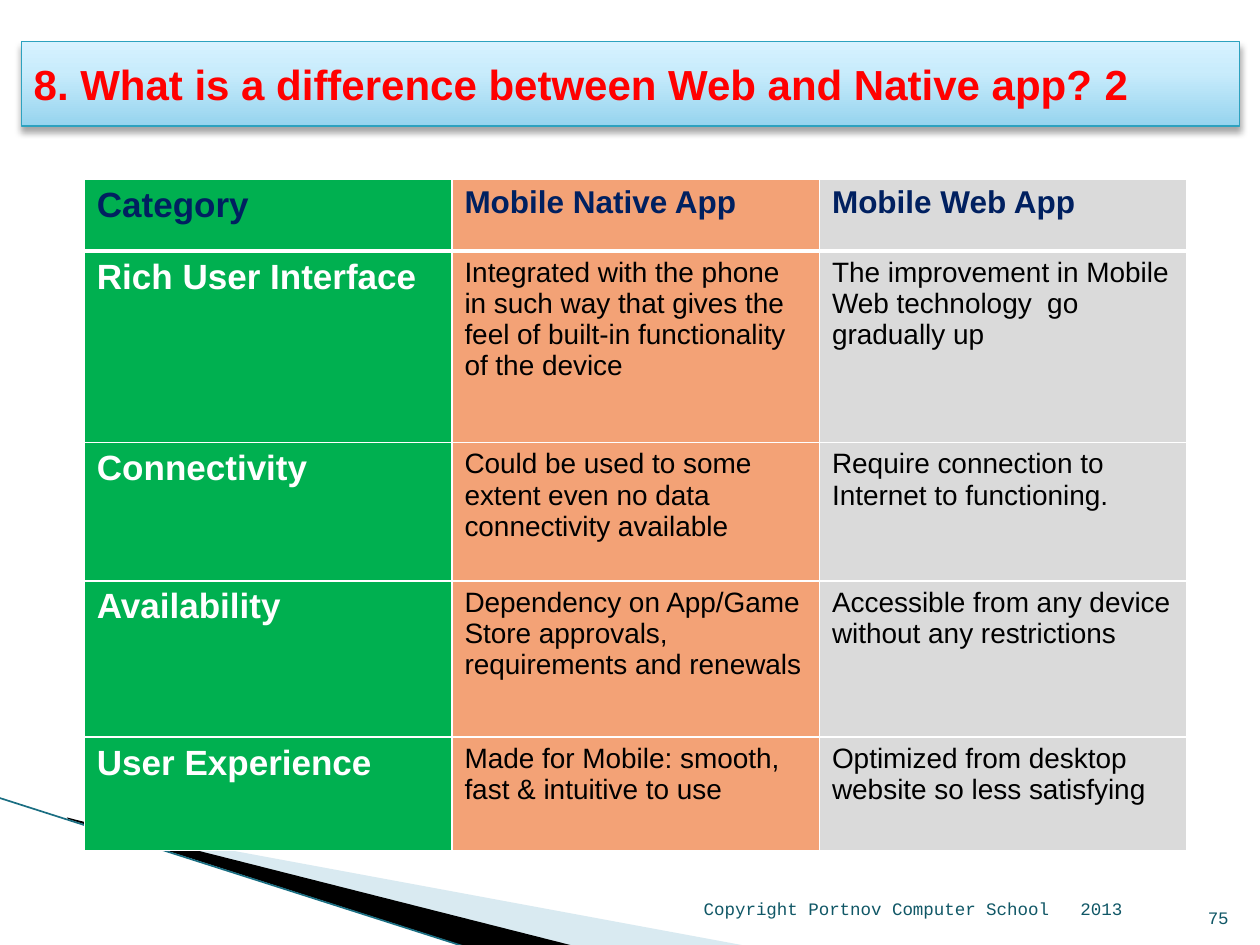
"""Build the slide comparing native and web mobile apps."""
from dataclasses import dataclass

from lxml import etree
from pptx import Presentation
from pptx import util as u
from pptx.dml.color import RGBColor
from pptx.enum import shapes, text
from pptx.oxml import ns

WHITE, BLACK, NAVY, TEAL = "FFFFFF", "000000", "002060", "105766"
COLUMN_FILLS = ("00B050", "F3A276", "DADADA")
COLUMN_WIDTH = 7.41
ROW_HEIGHTS = (1.45, 3.86, 2.79, 3.15, 2.29)
ROWS = (
    ("Category", "Mobile Native App", "Mobile Web App"),
    ("Rich User Interface",
     "Integrated with the phone in such way that gives the feel of built-in functionality of the device",
     "The improvement in Mobile Web technology  go gradually up"),
    ("Connectivity",
     "Could be used to some extent even no data connectivity available",
     "Require connection to Internet to functioning."),
    ("Availability",
     "Dependency on App/Game Store approvals, requirements and renewals",
     "Accessible from any device without any restrictions"),
    ("User Experience",
     "Made for Mobile: smooth, fast & intuitive to use",
     "Optimized from desktop website so less satisfying"),
)


@dataclass(frozen=True)
class Style:
    size: float
    color: str
    bold: bool = False
    font: str = "Arial"


@dataclass(frozen=True)
class Wedge:
    points: tuple
    color: str
    opacity: int = 100


@dataclass(frozen=True)
class Footer:
    wording: str
    left: float
    top: float
    width: float
    height: float


WEDGES = (
    Wedge(((1.4, 16.54), (15.11, 19.08), (11.58, 19.08), (1.4, 16.51)), "A0CBDC", 40),
    Wedge(((1.35, 16.48), (11.61, 19.08), (9.45, 19.1), (1.37, 16.51)), BLACK),
)
FOOTERS = (
    Footer("Copyright Portnov Computer School   2013", 12.07, 17.58, 10.8, 1.07),
    Footer("75", 23.7, 17.81, 1.32, 1.02),
)


def rgb(value: str) -> RGBColor:
    return RGBColor.from_string(value)


def add_node(parent, tag: str, **attributes):
    return etree.SubElement(parent, ns.qn(tag), {key: str(value) for key, value in attributes.items()})


def add_color(parent, value: str, opacity: int = 100) -> None:
    color = add_node(parent, "a:srgbClr", val=value)
    if opacity < 100:
        add_node(color, "a:alpha", val=opacity * 1000)


def write(para, wording: str, style: Style) -> None:
    span = para.add_run()
    span.text = wording
    span.font.name = style.font
    span.font.size = u.Pt(style.size)
    span.font.bold = style.bold
    span.font.color.rgb = rgb(style.color)


def add_wedge(page, wedge: Wedge) -> None:
    corners = [(u.Cm(x), u.Cm(y)) for x, y in wedge.points]
    builder = page.shapes.build_freeform(*corners[0])
    builder.add_line_segments(corners[1:], close=True)
    shape = builder.convert_to_shape()
    shape.shadow.inherit = False
    shape.line.fill.background()
    shape.fill.solid()
    shape.fill.fore_color.rgb = rgb(wedge.color)
    if wedge.opacity < 100:
        color = shape._element.spPr.find(ns.qn("a:solidFill"))[0]
        add_node(color, "a:alpha", val=wedge.opacity * 1000)


def add_edge(page) -> None:
    edge = page.shapes.add_connector(
        shapes.MSO_CONNECTOR.STRAIGHT, u.Cm(-0.03), u.Cm(16.08), u.Cm(9.42), u.Cm(19.1))
    edge.line.color.rgb = rgb("1A6E82")
    edge.line.width = u.Pt(0.95)
    add_node(edge._element.spPr, "a:effectLst")


def add_title(page) -> None:
    box = page.shapes.add_shape(
        shapes.MSO_SHAPE.RECTANGLE, u.Cm(0.43), u.Cm(0.84), u.Cm(24.56), u.Cm(1.7))
    box.line.color.rgb = rgb("2DA2BF")
    box.line.width = u.Pt(0.75)
    box.fill.gradient()
    box.fill.gradient_angle = 90
    stops = box._element.spPr.find(ns.qn("a:gradFill")).find(ns.qn("a:gsLst"))
    for stop in list(stops):
        stops.remove(stop)
    for position, color in ((0, "96D4EE"), (65, "C9ECFC"), (100, "D7F2FF")):
        add_color(add_node(stops, "a:gs", pos=position * 1000), color)
    box.shadow.inherit = False
    effects = box._element.spPr.find(ns.qn("a:effectLst"))
    shadow = add_node(effects, "a:outerShdw", blurRad=u.Pt(4), dist=u.Pt(3),
                      dir=5400000, rotWithShape=0)
    add_color(shadow, BLACK, 35)
    frame = box.text_frame
    frame.word_wrap = True
    frame.vertical_anchor = text.MSO_ANCHOR.MIDDLE
    para = frame.paragraphs[0]
    para.alignment = text.PP_ALIGN.LEFT
    write(para, "8. What is a difference between Web and Native app?\t2", Style(24, "FF0000", True))


def add_footer(page, footer: Footer) -> None:
    box = page.shapes.add_textbox(
        u.Cm(footer.left), u.Cm(footer.top), u.Cm(footer.width), u.Cm(footer.height))
    frame = box.text_frame
    frame.word_wrap = True
    frame.vertical_anchor = text.MSO_ANCHOR.BOTTOM
    para = frame.paragraphs[0]
    para.alignment = text.PP_ALIGN.RIGHT
    write(para, footer.wording, Style(10, TEAL, font="Courier New"))


def add_borders(cell, header: bool) -> None:
    properties = cell._tc.get_or_add_tcPr()
    widths = {"L": 1, "R": 1, "T": 1, "B": 3 if header else 1}
    for index, (side, width) in enumerate(widths.items()):
        border = etree.Element(ns.qn(f"a:ln{side}"), w=str(u.Pt(width)))
        add_color(add_node(border, "a:solidFill"), WHITE)
        properties.insert(index, border)


def cell_style(row: int, column: int) -> Style:
    if row == 0:
        return Style(18 if column else 20, NAVY, True)
    return Style(16, BLACK) if column else Style(20, WHITE, True)


def add_comparison(page) -> None:
    count = len(COLUMN_FILLS)
    table = page.shapes.add_table(
        len(ROWS), count, u.Cm(1.7), u.Cm(3.61),
        u.Cm(COLUMN_WIDTH * count), u.Cm(sum(ROW_HEIGHTS))).table
    for column in table.columns:
        column.width = u.Cm(COLUMN_WIDTH)
    for row, (height, wordings) in enumerate(zip(ROW_HEIGHTS, ROWS)):
        table.rows[row].height = u.Cm(height)
        for column, (fill, wording) in enumerate(zip(COLUMN_FILLS, wordings)):
            cell = table.cell(row, column)
            cell.fill.solid()
            cell.fill.fore_color.rgb = rgb(fill)
            add_borders(cell, row == 0)
            write(cell.text_frame.paragraphs[0], wording, cell_style(row, column))


def main() -> None:
    deck = Presentation()
    deck.slide_width, deck.slide_height = u.Cm(25.4), u.Cm(19.05)
    page = deck.slides.add_slide(deck.slide_layouts[6])
    for wedge in WEDGES:
        add_wedge(page, wedge)
    add_edge(page)
    add_title(page)
    for footer in FOOTERS:
        add_footer(page, footer)
    add_comparison(page)
    deck.save("out.pptx")


if __name__ == "__main__":
    main()
